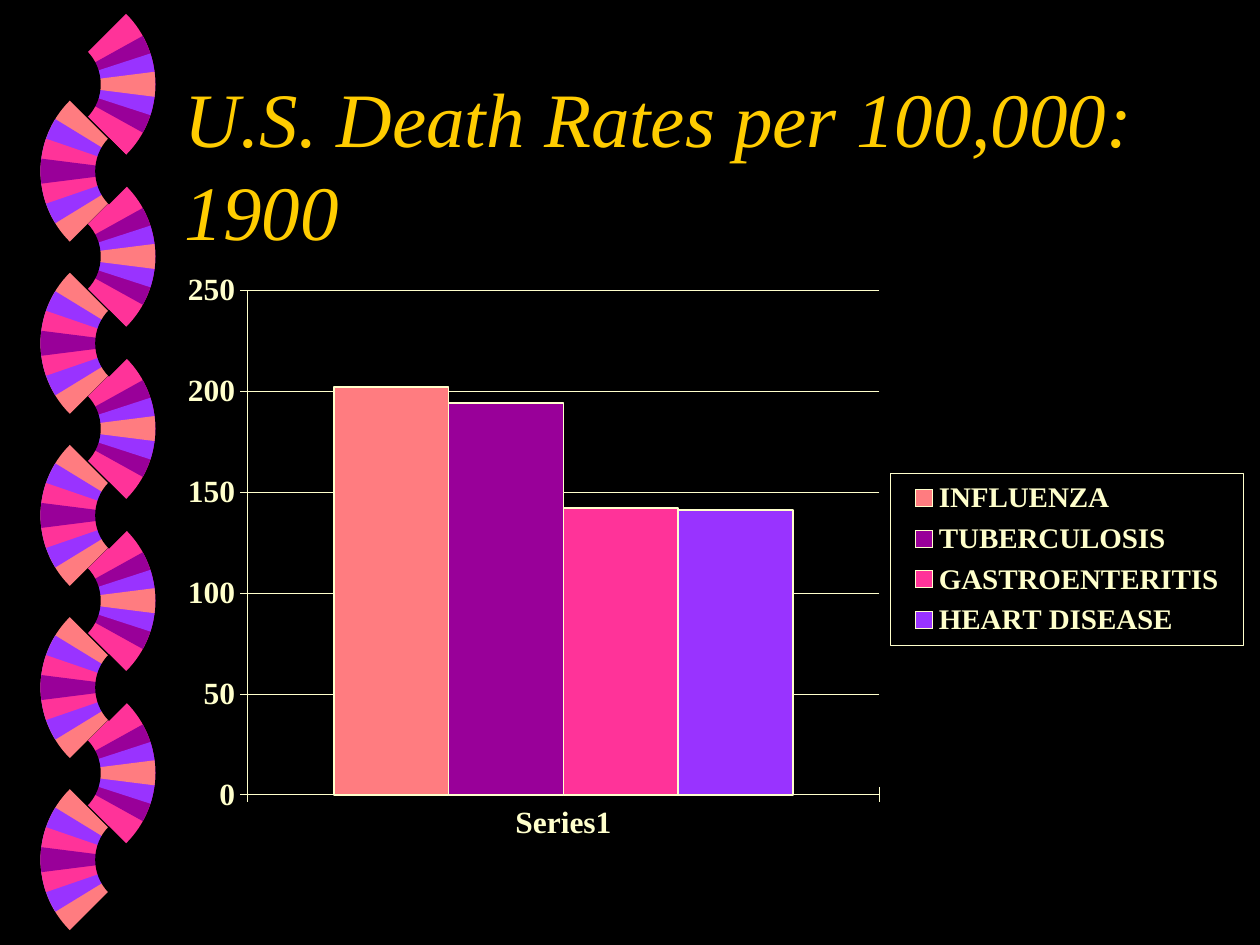
from dataclasses import dataclass
from math import cos, radians, sin, sqrt, tan

from lxml.etree import SubElement
from pptx import Presentation
from pptx.chart.data import CategoryChartData
from pptx.dml.color import RGBColor
from pptx.enum.chart import (
    XL_CHART_TYPE as ChartType,
    XL_LEGEND_POSITION as LegendPosition,
    XL_TICK_LABEL_POSITION as LabelPosition,
    XL_TICK_MARK as TickMark,
)
from pptx.enum.text import MSO_ANCHOR as Anchor
from pptx.oxml import parse_xml
from pptx.oxml.ns import qn
from pptx.util import Cm, Pt

BLACK = RGBColor(0x00, 0x00, 0x00)
PINK = RGBColor(0xFF, 0x33, 0x99)
PURPLE = RGBColor(0x99, 0x00, 0x99)
VIOLET = RGBColor(0x99, 0x33, 0xFF)
CORAL = RGBColor(0xFF, 0x7C, 0x80)
GOLD = RGBColor(0xFF, 0xCC, 0x00)
CREAM = RGBColor(0xFF, 0xFF, 0xCC)
FONT = "Times New Roman"

FAN_COUNT = 5
FAN_PITCH = 3.47
CHART_NS = (
    'xmlns:c="http://schemas.openxmlformats.org/drawingml/2006/chart" '
    'xmlns:a="http://schemas.openxmlformats.org/drawingml/2006/main"'
)


@dataclass(frozen=True)
class Wedge:
    color: RGBColor
    half_angle: float
    radius: float = 2.01
    shift: float = 0


@dataclass(frozen=True)
class FanColumn:
    """Fans stacked down the page; side is 1 when they open right, -1 left."""
    apex_x: float
    first_y: float
    side: int
    wedges: tuple[Wedge, ...]


@dataclass(frozen=True)
class Cause:
    name: str
    rate: int
    color: RGBColor


HUB = Wedge(BLACK, 45, radius=0.95, shift=-0.04)
FAN_COLUMNS = (
    FanColumn(1.12, 1.7, 1, (
        Wedge(PINK, 45), Wedge(PURPLE, 29), Wedge(VIOLET, 18),
        Wedge(CORAL, 7.2), HUB)),
    FanColumn(2.83, 3.45, -1, (
        Wedge(CORAL, 45), Wedge(VIOLET, 31.5), Wedge(PINK, 19),
        Wedge(PURPLE, 7.2), HUB)),
)
CAUSES = (
    Cause("INFLUENZA", 202, CORAL),
    Cause("TUBERCULOSIS", 194, PURPLE),
    Cause("GASTROENTERITIS", 142, PINK),
    Cause("HEART DISEASE", 141, VIOLET),
)


def bend_last_lines(shape) -> None:
    """Turn the last three line points into one Bézier curve."""
    lines = list(shape._element.iter(qn("a:lnTo")))[-3:]
    outline = lines[0].getparent()
    curve = SubElement(outline, qn("a:cubicBezTo"))
    lines[0].addprevious(curve)
    for line in lines:
        curve.append(line[0])
        outline.remove(line)


def draw_wedge(page, wedge: Wedge, apex_x: float, apex_y: float, side: int) -> None:
    """Draw a sector on the diagonal, then turn it by 45 degrees to lie level."""
    half = radians(wedge.half_angle)
    start, end = radians(45) - half, radians(45) + half
    size = wedge.radius * cos(start)
    corner_x = apex_x + side * (wedge.shift + size / sqrt(2) - size / 2)
    corner_y = apex_y + size / 2
    pull = 4 / 3 * tan(half / 2)
    arc = [
        (Cm(corner_x + side * wedge.radius * (cos(angle) - reach * sin(angle))),
         Cm(corner_y - wedge.radius * (sin(angle) + reach * cos(angle))))
        for angle, reach in ((start, 0), (start, pull), (end, -pull), (end, 0))
    ]
    builder = page.shapes.build_freeform(Cm(corner_x), Cm(corner_y))
    builder.add_line_segments(arc, close=True)
    shape = builder.convert_to_shape()
    bend_last_lines(shape)
    shape.rotation = 45 * side % 360
    shape.shadow.inherit = False
    shape.fill.solid()
    shape.fill.fore_color.rgb = wedge.color
    shape.line.fill.background()


def draw_fans(page) -> None:
    for column in FAN_COLUMNS:
        for row in range(FAN_COUNT):
            for wedge in column.wedges:
                draw_wedge(page, wedge, column.apex_x,
                           column.first_y + row * FAN_PITCH, column.side)


def format_font(font, *, size: float, color: RGBColor,
                bold: bool = False, italic: bool = False) -> None:
    font.name = FONT
    font.size = Pt(size)
    font.bold = bold
    font.italic = italic
    font.color.rgb = color


def add_text(page, text: str, *, left: float, top: float, width: float,
             height: float, **style) -> None:
    box = page.shapes.add_textbox(Cm(left), Cm(top), Cm(width), Cm(height))
    frame = box.text_frame
    frame.word_wrap = True
    frame.vertical_anchor = Anchor.MIDDLE
    para = frame.paragraphs[0]
    span = para.add_run()
    span.text = text
    format_font(span.font, **style)


def format_line(line, width: float) -> None:
    line.color.rgb = CREAM
    line.width = Pt(width)


def manual_layout(x: float, y: float, w: float, h: float, target: str = ""):
    """Return a chart layout element, in fractions of the chart's size."""
    return parse_xml(
        f'<c:layout {CHART_NS}><c:manualLayout>{target}'
        '<c:xMode val="edge"/><c:yMode val="edge"/>'
        f'<c:x val="{x}"/><c:y val="{y}"/><c:w val="{w}"/><c:h val="{h}"/>'
        '</c:manualLayout></c:layout>'
    )


def place_plot(chart) -> None:
    plot_area = chart.plots[0]._element.getparent()
    for layout in plot_area.findall(qn("c:layout")):
        plot_area.remove(layout)
    inner = '<c:layoutTarget val="inner"/>'
    plot_area.insert(0, manual_layout(0.07, 0.02, 0.59, 0.91, inner))


def add_legend(chart) -> None:
    chart.has_legend = True
    legend = chart.legend
    legend.position = LegendPosition.RIGHT
    legend.include_in_layout = False
    format_font(legend.font, size=16.6, color=CREAM, bold=True)
    element = legend._element
    element.find(qn("c:legendPos")).addnext(manual_layout(0.67, 0.35, 0.33, 0.31))
    element.find(qn("c:txPr")).addprevious(parse_xml(
        f'<c:spPr {CHART_NS}><a:noFill/><a:ln w="{Pt(0.25)}"><a:solidFill>'
        f'<a:srgbClr val="{CREAM}"/></a:solidFill></a:ln></c:spPr>'
    ))


def add_rate_chart(page) -> None:
    data = CategoryChartData()
    data.categories = ["Series1"]
    for cause in CAUSES:
        data.add_series(cause.name, [cause.rate])
    chart = page.shapes.add_chart(
        ChartType.COLUMN_CLUSTERED, Cm(3.48), Cm(5.51), Cm(21.59), Cm(11.43), data
    ).chart
    chart.has_title = False
    format_font(chart.font, size=18, color=CREAM, bold=True)
    plot = chart.plots[0]
    plot.gap_width = 150
    plot.vary_by_categories = False
    for series, cause in zip(plot.series, CAUSES):
        series.format.fill.solid()
        series.format.fill.fore_color.rgb = cause.color
        format_line(series.format.line, 1)
    for axis in (chart.category_axis, chart.value_axis):
        axis.major_tick_mark = TickMark.CROSS
        format_font(axis.tick_labels.font, size=18, color=CREAM, bold=True)
        format_line(axis.format.line, 0.25)
    chart.category_axis.tick_label_position = LabelPosition.LOW
    rates = chart.value_axis
    rates.minimum_scale, rates.maximum_scale, rates.major_unit = 0, 250, 50
    rates.has_major_gridlines = True
    format_line(rates.major_gridlines.format.line, 0.25)
    place_plot(chart)
    add_legend(chart)


def main() -> None:
    deck = Presentation()
    deck.slide_width, deck.slide_height = Cm(25.4), Cm(19.05)
    page = deck.slides.add_slide(deck.slide_layouts[6])
    page.background.fill.solid()
    page.background.fill.fore_color.rgb = BLACK
    draw_fans(page)
    add_text(page, "U.S. Death Rates per 100,000: 1900", left=3.48, top=1.7,
             width=21.59, height=3.18, size=44, color=GOLD, italic=True)
    add_rate_chart(page)
    deck.save("out.pptx")


if __name__ == "__main__":
    main()
